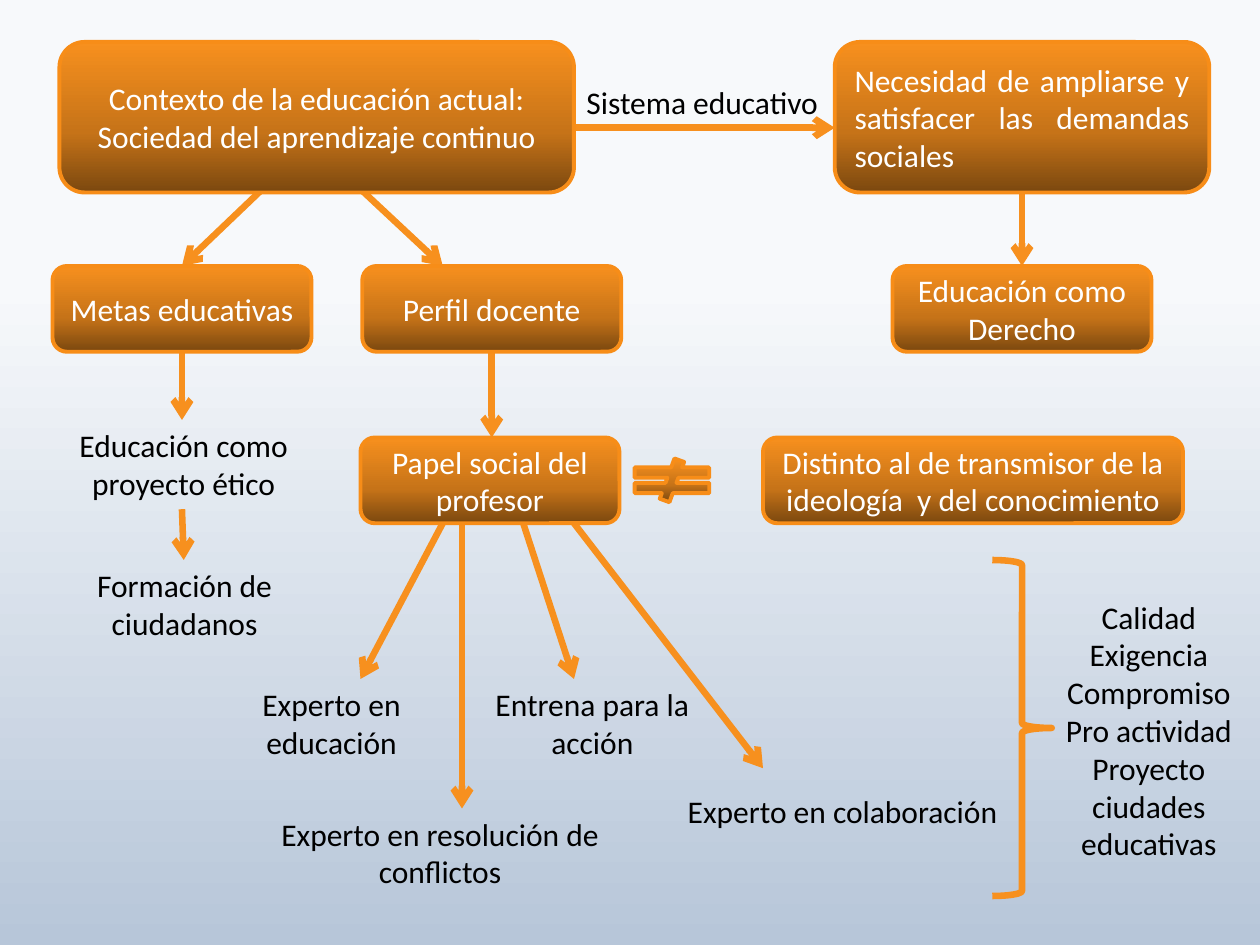
"""Builds a concept map of the current educational context."""
from lxml import etree
from pptx import Presentation
from pptx.dml.color import RGBColor
from pptx.enum.shapes import MSO_CONNECTOR, MSO_SHAPE
from pptx.enum.text import MSO_ANCHOR, PP_ALIGN
from pptx.oxml.ns import qn
from pptx.util import Pt

STRAIGHT = MSO_CONNECTOR.STRAIGHT
ROUNDED = MSO_SHAPE.ROUNDED_RECTANGLE
NOT_EQUAL = MSO_SHAPE.MATH_NOT_EQUAL
BRACE = MSO_SHAPE.RIGHT_BRACE
MIDDLE, TOP = MSO_ANCHOR.MIDDLE, MSO_ANCHOR.TOP
CENTER, LEFT, JUSTIFY = PP_ALIGN.CENTER, PP_ALIGN.LEFT, PP_ALIGN.JUSTIFY


def color(value):
    return RGBColor.from_string(value)


class ConceptMap:
    font, size = "Calibri", 18
    orange, border = "F7901E", "F78D18"
    box_stops = [(0, "F7901E"), (60, "C67318"), (100, "7B480F")]
    background_stops = [(30, "F7F9FB"), (100, "B7C6D9")]

    def __init__(self, presentation):
        self.slide = presentation.slides.add_slide(presentation.slide_layouts[6])
        self.gradient(self.slide.background.fill, self.slide.element, self.background_stops)

    def gradient(self, fill, element, stops):
        fill.gradient()
        fill.gradient_angle = 270
        stop_list = next(element.iter(qn("a:gsLst")))
        for stop in list(stop_list):
            stop_list.remove(stop)
        for position, value in stops:
            stop = etree.SubElement(stop_list, qn("a:gs"), pos=str(position * 1000))
            etree.SubElement(stop, qn("a:srgbClr"), val=value)

    def add_lines(self, shape, lines, value, align, anchor, wrap=True):
        frame = shape.text_frame
        frame.word_wrap = wrap
        frame.vertical_anchor = anchor
        for index, line in enumerate(lines):
            paragraph = frame.add_paragraph() if index else frame.paragraphs[0]
            paragraph.alignment = align
            run = paragraph.add_run()
            run.text = line
            run.font.name = self.font
            run.font.size = Pt(self.size)
            run.font.color.rgb = color(value)

    def shape(self, kind, area, line_color, line_width):
        shape = self.slide.shapes.add_shape(kind, *map(Pt, area))
        shape.shadow.inherit = False
        shape.line.color.rgb = color(line_color)
        shape.line.width = Pt(line_width)
        return shape

    def box(self, area, *lines, kind=ROUNDED, align=CENTER):
        shape = self.shape(kind, area, self.border, 2.25)
        self.gradient(shape.fill, shape.element, self.box_stops)
        self.add_lines(shape, lines, "FFFFFF", align, MIDDLE)

    def brace(self, area):
        self.shape(BRACE, area, self.orange, 3.75).fill.background()

    def label(self, area, *lines, align=CENTER, wrap=True):
        shape = self.slide.shapes.add_textbox(*map(Pt, area))
        self.add_lines(shape, lines, "000000", align, TOP, wrap)

    def arrow(self, *ends):
        connector = self.slide.shapes.add_connector(STRAIGHT, *map(Pt, ends))
        connector.line.color.rgb = color(self.orange)
        connector.line.width = Pt(3.75)
        properties = connector.element.spPr
        etree.SubElement(properties.find(qn("a:ln")), qn("a:tailEnd"), type="arrow")
        etree.SubElement(properties, qn("a:effectLst"))


def main():
    presentation = Presentation()
    presentation.slide_width, presentation.slide_height = Pt(720), Pt(540)
    concept_map = ConceptMap(presentation)

    for ends in [
        (328, 73, 477, 73), (149, 109, 104, 152), (207, 109, 253, 152),
        (584, 109, 584, 152), (281, 201, 281, 250), (104, 201, 104, 240),
        (104, 291, 105, 320), (253, 299, 206, 388), (299, 299, 328, 388),
        (264, 299, 264, 462), (328, 299, 436, 439),
    ]:
        concept_map.arrow(*ends)

    concept_map.box((34, 24, 294, 86), "Contexto de la educación actual:",
                    "Sociedad del aprendizaje continuo")
    concept_map.box((477, 24, 214, 86),
                    "Necesidad de ampliarse y satisfacer las demandas sociales",
                    align=JUSTIFY)
    for left, top, width, text in [
        (30, 152, 148, "Metas educativas"),
        (207, 152, 148, "Perfil docente"),
        (510, 152, 148, "Educación como Derecho"),
        (206, 250, 148, "Papel social del profesor"),
        (436, 250, 240, "Distinto al de transmisor de la ideología  y del conocimiento"),
    ]:
        concept_map.box((left, top, width, 49), text)
    concept_map.box((355, 262, 58, 25), kind=NOT_EQUAL)

    concept_map.label((328, 44, 148, 29), "Sistema educativo", align=LEFT, wrap=False)
    concept_map.label((36, 240, 138, 51), "Educación como", "proyecto ético", wrap=False)
    for left, top, width, height, text in [
        (31, 320, 149, 51, "Formación de ciudadanos"),
        (115, 388, 149, 51, "Experto en educación"),
        (264, 388, 149, 51, "Entrena para la acción"),
        (149, 462, 205, 51, "Experto en resolución de conflictos"),
        (379, 449, 205, 29, "Experto en colaboración"),
    ]:
        concept_map.label((left, top, width, height), text)

    concept_map.brace((567, 320, 34, 192))
    concept_map.label((600, 338, 113, 160), "Calidad", "Exigencia", "Compromiso",
                      "Pro actividad", "Proyecto ciudades educativas")
    presentation.save("out.pptx")


if __name__ == "__main__":
    main()
